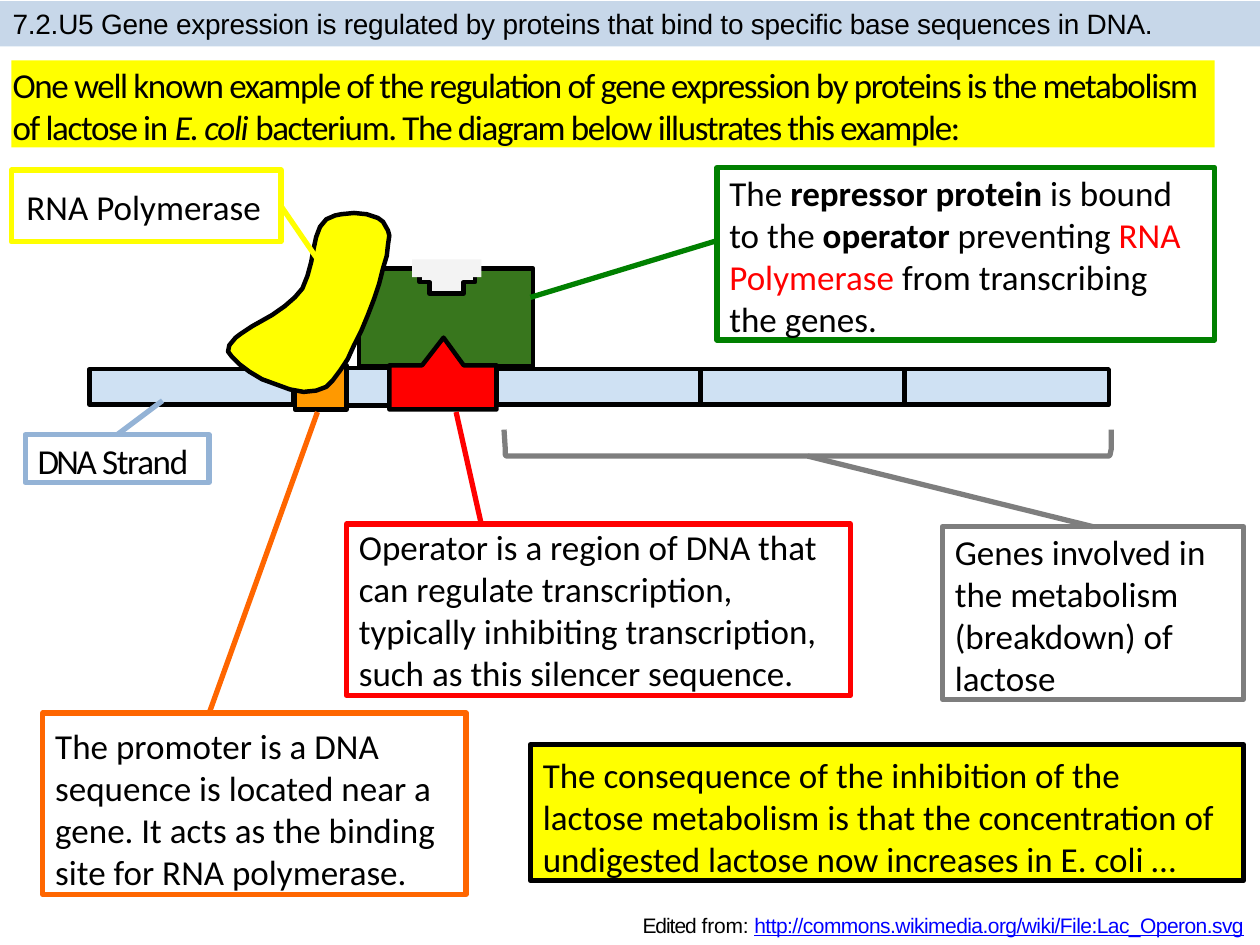
"""Build a slide explaining how a repressor protein regulates lactose metabolism."""
from lxml.etree import SubElement
from pptx import Presentation
from pptx.dml.color import RGBColor
from pptx.enum.shapes import MSO_CONNECTOR as Connector, MSO_SHAPE as Shape
from pptx.enum.text import MSO_ANCHOR as Anchor, MSO_AUTO_SIZE as AutoSize
from pptx.oxml.ns import qn
from pptx.util import Inches, Pt

COLORS = {
    "black": "000000", "red": "FF0000", "yellow": "FFFF00", "orange": "FF9900",
    "deep orange": "FF6600", "gray": "7E7E7E", "pale gray": "F3F3F3",
    "green": "008000", "moss": "38761D", "pale blue": "CFE1F3",
    "steel blue": "94B3D6", "band": "B8CDE4", "link": "0000FF",
}

presentation = Presentation()
presentation.slide_width, presentation.slide_height = Inches(10), Inches(7.5)
slide = presentation.slides.add_slide(presentation.slide_layouts[6])
shapes = slide.shapes
column, row = presentation.slide_width / 100, presentation.slide_height / 75


def place(*lengths):
    return [round(length * (row if index % 2 else column))
            for index, length in enumerate(lengths)]


def style(shape, fill, line, width):
    shape.shadow.inherit = False
    if fill:
        shape.fill.solid()
        shape.fill.fore_color.rgb = RGBColor.from_string(COLORS[fill])
    else:
        shape.fill.background()
    if line:
        shape.line.color.rgb = RGBColor.from_string(COLORS[line])
        shape.line.width = Pt(width)
    else:
        shape.line.fill.background()


gene_width = 16.2
notch = [(33.3, 21.3), (33.3, 22.4), (34.1, 22.4), (34.1, 23.3),
         (36.8, 23.3), (36.8, 22.4), (37.7, 22.4), (37.7, 21.3)]
operator = [(30.9, 29), (33.5, 29), (35.2, 26.8), (36.8, 29),
            (39.4, 29), (39.4, 32.5), (30.9, 32.5)]
polymerase = [
    (28.1, 16.9), (27.1, 17), (26.6, 17.1), (25.9, 17.4), (25.4, 18), (25.1, 18.8),
    (24.9, 19.7), (24.7, 20.8), (24.4, 21.9), (24, 22.9), (23.4, 23.6), (22.6, 24.3),
    (21.6, 25), (20, 25.9), (19.1, 26.5), (18.7, 26.8), (18.2, 27.4), (18.1, 27.9),
    (18.4, 28.3), (19, 28.9), (19.8, 29.5), (20.8, 30.1), (21.9, 30.5), (23, 30.9),
    (24.1, 31.1), (25.1, 31), (25.9, 30.7), (26.4, 30.2), (27, 29.4), (27.6, 28.5),
    (28.1, 27.4), (28.7, 26.2), (29.2, 25), (29.7, 23.7), (30.1, 22.5), (30.4, 21.3),
    (30.7, 20.3), (30.8, 19.4), (30.9, 18.7), (30.8, 18.3), (30.4, 17.6), (30, 17.3),
    (29.1, 17),
]
bracket = [(88.2, 34.1), (88.2, 35.6), (88.1, 36.1), (88, 36.2),
           (40.2, 36.2), (40.1, 36.1), (40.1, 35.6), (40, 34.1)]

drawing = [
    ([28.5, 21.3, 13.8, 7.8], "moss", "black", 2.56),
    (notch, "pale gray", "black", 2.56),
    ([32.7, 20.6, 5.5, 1.4], "pale gray", None, 0),
    ([7.1, 29.3, gene_width, 2.8], "pale blue", "black", 2.56),
    ([23.4, 29, 4.1, 3.5], "orange", "black", 2.56),
    ([27.5, 29.2, 3.4, 3], "pale blue", "black", 2.56),
    *[([39.4 + gene_width * gene, 29.3, gene_width, 2.8], "pale blue", "black", 2.56)
      for gene in range(3)],
    (operator, "red", "black", 2.56),
    (polymerase, "yellow", "black", 2.56),
    (bracket, None, "gray", 3),
    ([0, 0.1, 100, 3.6], "band", None, 0),
]
for outline, fill, line, width in drawing:
    if isinstance(outline[0], tuple):
        points = [place(*point) for point in outline]
        builder = shapes.build_freeform(*points[0])
        builder.add_line_segments(points[1:], close=outline is not bracket)
        shape = builder.convert_to_shape()
    else:
        shape = shapes.add_shape(Shape.RECTANGLE, *place(*outline))
    style(shape, fill, line, width)
band_color = shape._element.spPr.find(qn("a:solidFill"))[0]
SubElement(band_color, qn("a:alpha"), val="78000")

heading = {"size": Pt(16), "name": "Arial"}
body = {"size": Pt(20), "name": "Calibri"}
footer = {"size": Pt(12), "name": "Arial"}
inset = {"margin_left": Inches(0.1), "margin_right": Inches(0.2)}

texts = {
    "heading": ([0.9, 0.4, 95, 2.9], None, None, heading, {"margin_top": Inches(0.01)}, [
        ("7.2.U5 Gene expression is regulated by proteins that bind to specific "
         "base sequences in DNA.", {"spacing": -10})]),
    "introduction": ([0.9, 4.8, 95.5, 6.9], "yellow", None, body,
                     {"margin_top": Inches(0.02)}, [
        ("One well known example of the regulation of gene expression by proteins "
         "is the metabolism of lactose in ", {"spacing": -80}),
        ("E. coli ", {"spacing": -80, "italic": True}),
        ("bacterium. The diagram below illustrates this example:", {"spacing": -80})]),
    "genes": ([74.8, 41.8, 23.9, 13.7], None, "gray", body,
              {**inset, "margin_top": Inches(0.03)}, [
        ("Genes involved in the metabolism (breakdown) of lactose", {})]),
    "repressor": ([56.9, 13.3, 39.5, 13.7], None, "green", body,
                  {**inset, "margin_top": Inches(0.03)}, [
        ("The ", {}), ("repressor protein ", {"bold": True}), ("is bound to the ", {}),
        ("operator", {"bold": True}), (" preventing", {}),
        (" RNA Polymerase ", {"color": "red"}), ("from transcribing the genes.", {})]),
    "polymerase": ([0.9, 13.5, 21.4, 5.7], None, "yellow", body,
                   {"margin_left": Inches(0.12), "vertical_anchor": Anchor.MIDDLE}, [
        ("RNA Polymerase", {})]),
    "operator": ([27.5, 41.6, 40, 13.6], None, "red", body,
                 {**inset, "margin_top": Inches(0.01)}, [
        ("Operator is a region of DNA that can regulate transcription, typically "
         "inhibiting transcription, such as this silencer sequence.", {})]),
    "promoter": ([3.4, 56.6, 33.6, 14.4], None, "deep orange", body,
                 {**inset, "margin_top": Inches(0.09)}, [
        ("The promoter is a DNA sequence is located near a gene. It acts as the "
         "binding site for RNA polymerase.", {})]),
    "consequence": ([42.1, 59.1, 56.6, 10.8], "yellow", "black", body,
                    {**inset, "margin_top": Inches(0.07)}, [
        ("The consequence of the inhibition of the lactose metabolism is that the "
         "concentration of undigested lactose now increases in E. coli …", {})]),
    "strand": ([2, 34.5, 14.6, 3.8], None, "steel blue", body,
               {"margin_left": Inches(0.1), "margin_top": Inches(0.04)}, [
        ("DNA ", {"spacing": -150}), ("Strand", {"spacing": -80})]),
    "footer": ([50.9, 72.7, 48.3, 1.9], None, None, footer, {}, [
        ("Edited ", {"spacing": -60}), ("from: ", {"spacing": -10}),
        ("http://commons.wikimedia.org/wiki/File:Lac_Operon.svg",
         {"spacing": -30, "color": "link", "underline": True})]),
}
boxes = {}
for name, (area, fill, line, font, frame_format, runs) in texts.items():
    boxes[name] = box = shapes.add_textbox(*place(*area))
    style(box, fill, line, 3)
    frame_values = {"word_wrap": True, "auto_size": AutoSize.NONE,
                    "margin_left": Inches(0.01), "margin_right": 0,
                    "margin_top": 0, "margin_bottom": 0, **frame_format}
    for attribute, value in frame_values.items():
        setattr(box.text_frame, attribute, value)
    paragraph = box.text_frame.paragraphs[0]
    for text, run_format in runs:
        run = paragraph.add_run()
        run.text = text
        values = {**font, **run_format}
        color = values.pop("color", "black")
        run.font.color.rgb = RGBColor.from_string(COLORS[color])
        spacing = values.pop("spacing", 0)
        if spacing:
            run._r.get_or_add_rPr().set("spc", str(spacing))
        for attribute, value in values.items():
            setattr(run.font, attribute, value)
boxes["footer"].text_frame.paragraphs[0].line_spacing = Pt(12.4)

leaders = [
    ("genes", 0, (86.75, 41.8), (64.1, 36.2), "gray"),
    ("repressor", None, (56.9, 19.1), (42.1, 23.6), "green"),
    ("polymerase", 3, (22.3, 16.35), (25.9, 21.6), "yellow"),
    ("operator", None, (38.2, 41.6), (36.2, 32.7), "red"),
    ("promoter", None, (16.6, 56.6), (25.2, 32.7), "deep orange"),
    ("strand", 0, (9.3, 34.5), (12.9, 31.8), "steel blue"),
]
for name, side, start, end, color in leaders:
    leader = shapes.add_connector(Connector.STRAIGHT, *place(*start, *end))
    leader.line.color.rgb = RGBColor.from_string(COLORS[color])
    leader.line.width = Pt(3)
    SubElement(leader._element.spPr, qn("a:effectLst"))
    if side is not None:
        leader.begin_connect(boxes[name], side)

presentation.save("out.pptx")
